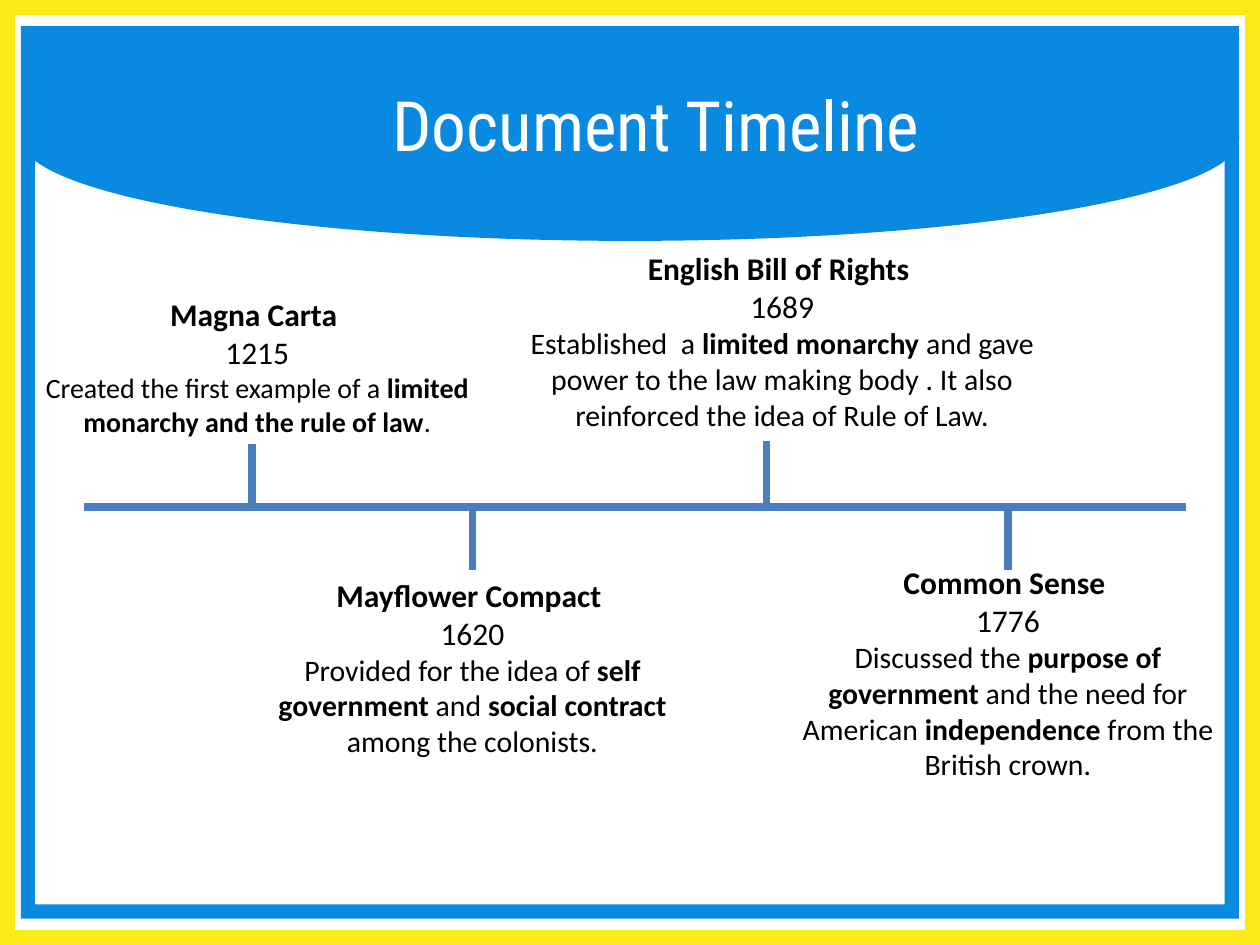
"""Build the Document Timeline slide on a grid of twelfths of an inch."""
from dataclasses import dataclass

from lxml import etree
from pptx import Presentation, util as u
from pptx.dml import color
from pptx.enum import shapes, text
from pptx.oxml import ns


@dataclass(frozen=True)
class Theme:
    blue: str = "0A89E0"
    yellow: str = "FAEA1A"
    axis: str = "4B7EBC"
    ink: str = "000000"
    white: str = "FFFFFF"
    title_font: str = "Roboto Condensed"
    body_font: str = "Calibri"
    title_size: float = 39.6
    heading_size: float = 18
    body_size: float = 17
    small_size: float = 16
    line_width: float = 4.5
    frame_share: float = 0.016


@dataclass(frozen=True)
class Box:
    column: float
    row: float
    columns: float
    rows: float

    def lengths(self) -> list[int]:
        return [grid(value) for value in (self.column, self.row, self.columns, self.rows)]


@dataclass(frozen=True)
class Document:
    name: str
    year: str
    summary: str
    box: Box
    stem_column: float
    stem_row: float
    summary_size: float


THEME = Theme()
AXIS_ROW = 48.25
STEM_ROWS = 6
DOCUMENTS = (
    Document("Magna Carta", "1215",
             "Created the first example of a **limited monarchy and the rule of law**.",
             Box(2, 27.5, 45, 18.6), 24, AXIS_ROW - STEM_ROWS, THEME.small_size),
    Document("English Bill of Rights", "1689",
             "Established  a **limited monarchy **and gave power to the law making body . "
             "It also reinforced the idea of Rule of Law.",
             Box(48.1, 23.15, 52.8, 22.45), 73, 42, THEME.body_size),
    Document("Mayflower Compact", "1620",
             "Provided for the idea of **self government **and **social contract **among the colonists.",
             Box(24, 54.25, 42, 23), 45, AXIS_ROW, THEME.body_size),
    Document("Common Sense", "1776",
             "Discussed the **purpose of government **and the need for American "
             "**independence** from the British crown.",
             Box(75, 53.05, 42, 26.65), 96, AXIS_ROW, THEME.body_size),
)


def grid(units: float) -> int:
    """Convert grid units to a length."""
    return u.Inches(units / 12)


def add_panel(slide, kind, box: Box, fill: str, rotation: float = 0):
    """Draw a plain filled shape without outline or shadow."""
    shape = slide.shapes.add_shape(kind, *box.lengths())
    shape.shadow.inherit = False
    shape.fill.solid()
    shape.fill.fore_color.rgb = color.RGBColor.from_string(fill)
    shape.line.fill.background()
    shape.rotation = rotation
    return shape


def add_frame(slide, box: Box, fill: str) -> None:
    """Draw a thin border frame."""
    add_panel(slide, shapes.MSO_SHAPE.FRAME, box, fill).adjustments[0] = THEME.frame_share


def add_line(slide, start: tuple[float, float], end: tuple[float, float]) -> None:
    """Draw one straight timeline stroke."""
    connector = slide.shapes.add_connector(
        shapes.MSO_CONNECTOR.STRAIGHT, *(grid(value) for value in start + end))
    connector.line.color.rgb = color.RGBColor.from_string(THEME.axis)
    connector.line.width = u.Pt(THEME.line_width)
    etree.SubElement(connector._element.spPr, ns.qn("a:effectLst"))


def add_text_frame(slide, box: Box, anchor=text.MSO_ANCHOR.TOP):
    """Add a wrapping text box and return its frame."""
    frame = slide.shapes.add_textbox(*box.lengths()).text_frame
    frame.word_wrap = True
    frame.vertical_anchor = anchor
    return frame


def write(paragraph, content: str, *, size: float, font: str = THEME.body_font,
          ink: str = THEME.ink) -> None:
    """Fill a centred paragraph, setting text between double asterisks in bold."""
    paragraph.alignment = text.PP_ALIGN.CENTER
    for index, part in enumerate(content.split("**")):
        if part:
            run = paragraph.add_run()
            run.text = part
            run.font.name = font
            run.font.size = u.Pt(size)
            run.font.bold = index % 2 == 1
            run.font.color.rgb = color.RGBColor.from_string(ink)


def add_document(slide, document: Document) -> None:
    """Draw the stem and the caption of one document."""
    add_line(slide, (document.stem_column, document.stem_row),
             (document.stem_column, document.stem_row + STEM_ROWS))
    frame = add_text_frame(slide, document.box)
    write(frame.paragraphs[0], f"**{document.name} **", size=THEME.heading_size)
    write(frame.add_paragraph(), document.year, size=THEME.heading_size)
    write(frame.add_paragraph(), document.summary, size=document.summary_size)


def main() -> None:
    """Build and save the slide."""
    presentation = Presentation()
    presentation.slide_width, presentation.slide_height = grid(120), grid(90)
    slide = presentation.slides.add_slide(presentation.slide_layouts[6])
    add_panel(slide, shapes.MSO_SHAPE.FLOWCHART_DELAY,
              Box(50.3, -44.75, 19.4, 116), THEME.blue, rotation=90)
    add_frame(slide, Box(0, 0, 120, 90), THEME.yellow)
    add_frame(slide, Box(2, 2.5, 116, 85), THEME.blue)
    title = add_text_frame(slide, Box(29, 7, 67, 9.5), text.MSO_ANCHOR.MIDDLE)
    write(title.paragraphs[0], "Document Timeline", size=THEME.title_size,
          font=THEME.title_font, ink=THEME.white)
    add_line(slide, (8, AXIS_ROW), (113, AXIS_ROW))
    for document in DOCUMENTS:
        add_document(slide, document)
    presentation.save("out.pptx")


if __name__ == "__main__":
    main()
